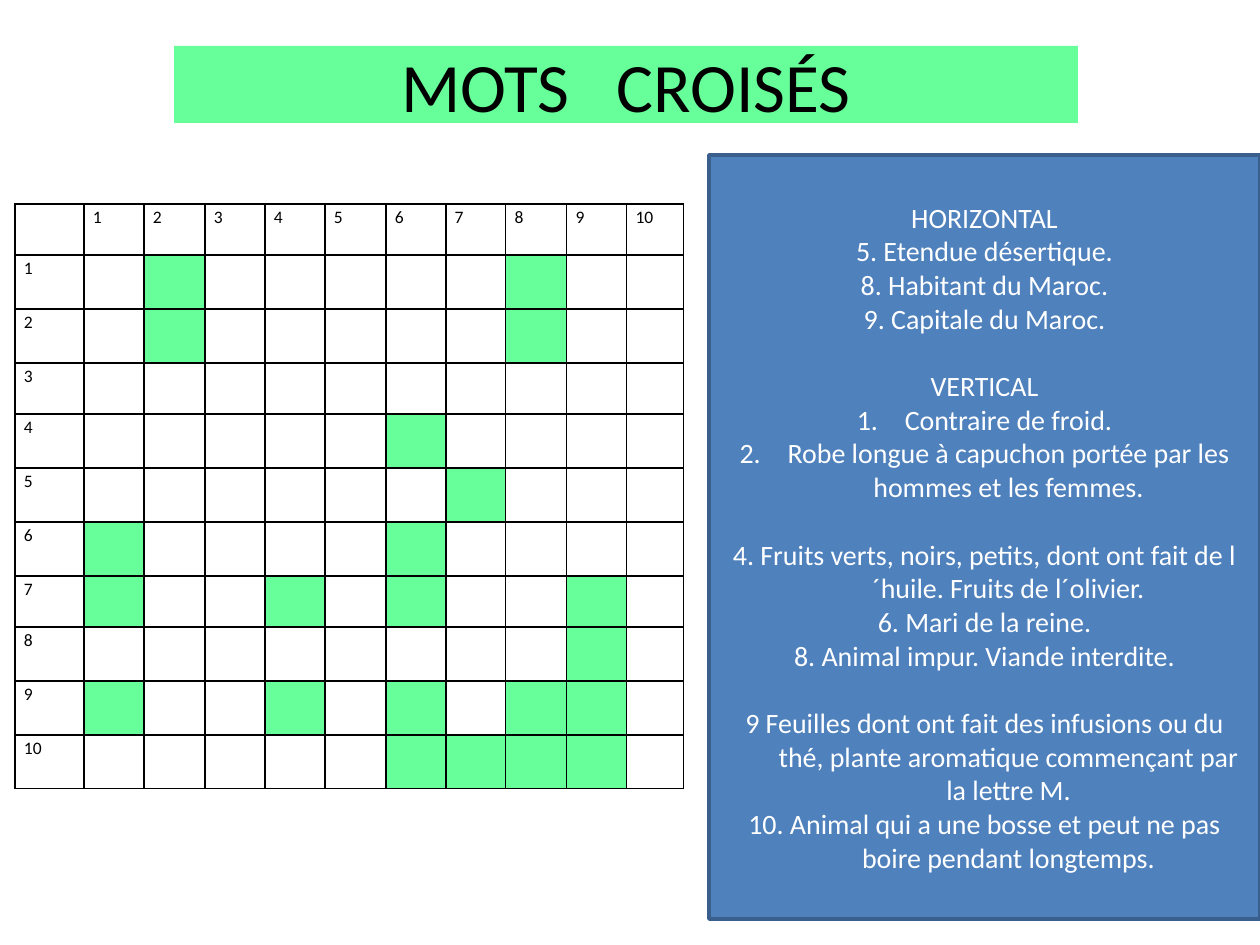
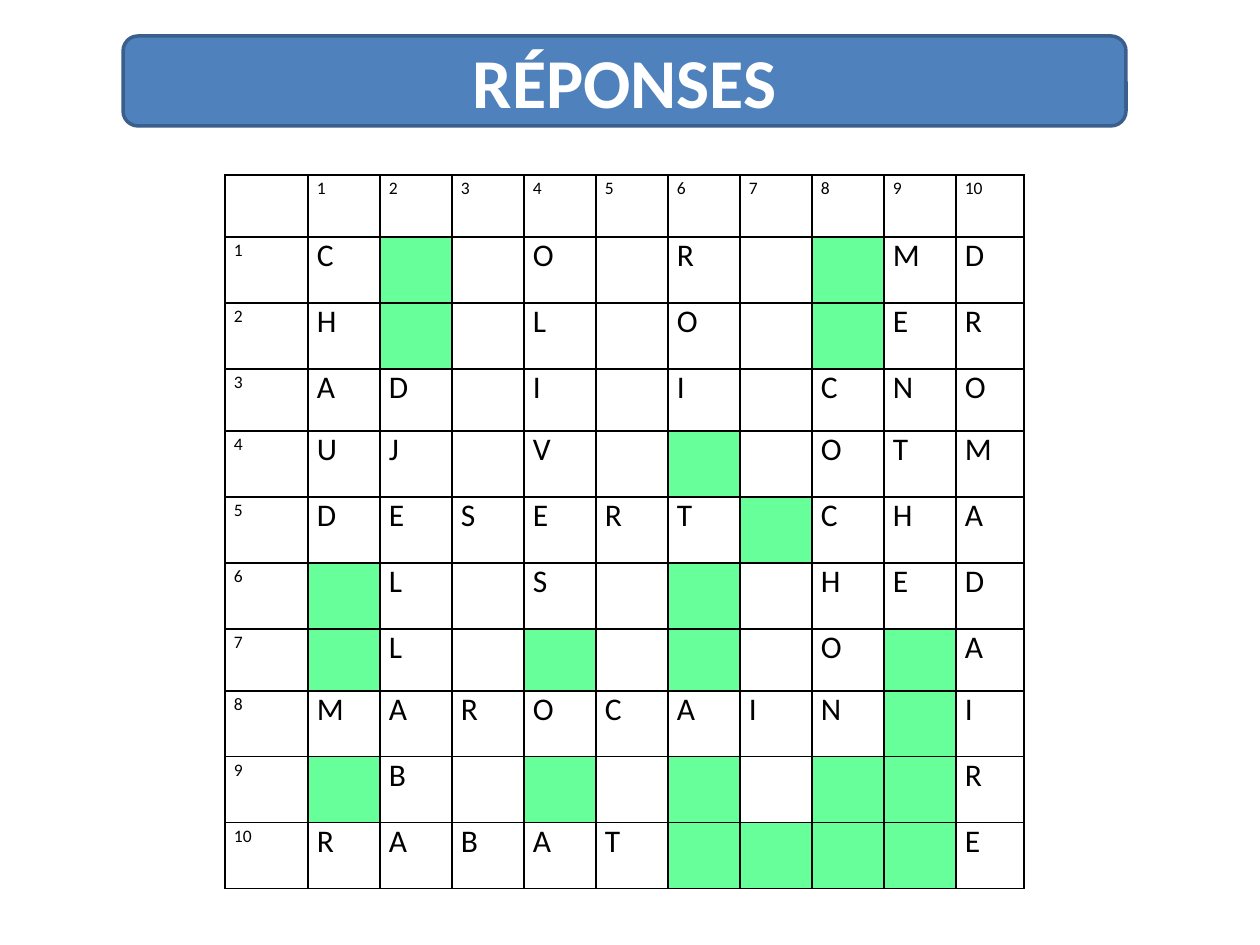
"""Build a crossword slide with its clues and a slide with the answers."""
import lxml.etree
import pptx
import pptx.dml.color
import pptx.enum.shapes
import pptx.enum.text
import pptx.oxml.ns
import pptx.util

PX = 914400 / 126
GREEN = pptx.dml.color.RGBColor(0x66, 0xFF, 0x99)
BLUE = pptx.dml.color.RGBColor(0x4F, 0x81, 0xBD)
DARK_BLUE = pptx.dml.color.RGBColor(0x3A, 0x5F, 0x8C)
WHITE = pptx.dml.color.RGBColor(0xFF, 0xFF, 0xFF)
BLACK = pptx.dml.color.RGBColor(0, 0, 0)
FONT = "Calibri"
HANGING = round(48 * PX)
CLUE_LINE = pptx.util.Pt(19.5)
qn = pptx.oxml.ns.qn
SHAPES = pptx.enum.shapes.MSO_SHAPE

# "#" marks a blocked square and "." an empty one
ANSWERS = [
    "C#.O.R.#MD",
    "H#.L.O.#ER",
    "AD.I.I.CNO",
    "UJ.V.#.OTM",
    "DESERT#CHA",
    "#L.S.#.HED",
    "#L.#.#.O#A",
    "MAROCAIN#I",
    "#B.#.#.##R",
    "RABAT####E",
]
CLUES = [
    ("HORIZONTAL", "plain"),
    ("5. Etendue désertique.", "plain"),
    ("8. Habitant du Maroc.", "plain"),
    ("9. Capitale du Maroc.", "plain"),
    ("VERTICAL", "plain gap"),
    ("Contraire de froid.", "hanging number"),
    ("Robe longue à capuchon portée par les hommes et les femmes.", "hanging number"),
    ("4. Fruits verts, noirs, petits, dont ont fait de l´huile. Fruits de l´olivier.",
     "hanging gap"),
    ("6. Mari de la reine.", "hanging"),
    ("8. Animal impur. Viande interdite.", "hanging"),
    ("9 Feuilles dont ont fait des infusions ou du thé, plante aromatique "
     "commençant par la lettre M.", "hanging gap"),
    ("10. Animal qui a une bosse et peut ne pas boire pendant longtemps.", "hanging"),
]


def add_panel(slide, preset, box, fill, line=None):
    panel = slide.shapes.add_shape(preset, *[round(length * PX) for length in box])
    panel.shadow.inherit = False
    panel.fill.solid()
    panel.fill.fore_color.rgb = fill
    if line is None:
        panel.line.fill.background()
    else:
        panel.line.color.rgb = line
        panel.line.width = pptx.util.Pt(2)
    panel.text_frame.word_wrap = True
    panel.text_frame.vertical_anchor = pptx.enum.text.MSO_ANCHOR.MIDDLE
    return panel.text_frame


def add_grid(slide, left, top, widths, heights, show_letters):
    frame = slide.shapes.add_table(
        len(heights), len(widths), round(left * PX), round(top * PX),
        round(sum(widths) * PX), round(sum(heights) * PX))
    grid = frame.table
    grid.first_row = grid.horz_banding = False
    for column, width in zip(grid.columns, widths):
        column.width = round(width * PX)
    for row, height in zip(grid.rows, heights):
        row.height = round(height * PX)
    for r in range(len(heights)):
        for c in range(len(widths)):
            cell = grid.cell(r, c)
            cell.margin_left = cell.margin_right = round(9 * PX)
            cell.margin_top = cell.margin_bottom = 0
            properties = cell._tc.get_or_add_tcPr()
            for side in ("lnL", "lnR", "lnT", "lnB"):
                border = lxml.etree.SubElement(properties, qn("a:" + side), w="12700")
                ink = lxml.etree.SubElement(border, qn("a:solidFill"))
                lxml.etree.SubElement(ink, qn("a:srgbClr"), val=str(BLACK))
            paragraph = cell.text_frame.paragraphs[0]
            if r and c:
                square = ANSWERS[r - 1][c - 1]
                cell.fill.solid()
                cell.fill.fore_color.rgb = GREEN if square == "#" else WHITE
                if show_letters and square.isalpha():
                    paragraph.text = square
                paragraph.font.size = pptx.util.Pt(18)
            else:
                cell.fill.background()
                if r or c:
                    paragraph.text = str(r or c)
                paragraph.line_spacing = 1.15
                paragraph.font.size = pptx.util.Pt(10)
            paragraph.font.name = FONT
            paragraph.font.color.rgb = BLACK


deck = pptx.Presentation()
deck.slide_width = round(1260 * PX)
deck.slide_height = round(945 * PX)
puzzle, solution = [deck.slides.add_slide(deck.slide_layouts[6]) for _ in range(2)]

heading = add_panel(puzzle, SHAPES.RECTANGLE, (174, 46, 904, 77), GREEN).paragraphs[0]
for word in ("MOTS", " ", "CROISÉS"):
    run = heading.add_run()
    run.text = word
    if word == " ":
        run._r.get_or_add_rPr().set("spc", "1790")
heading.alignment = pptx.enum.text.PP_ALIGN.CENTER
heading.font.name = FONT
heading.font.size = pptx.util.Pt(39.6)
heading.font.color.rgb = BLACK

clue_text = add_panel(puzzle, SHAPES.RECTANGLE, (709, 155, 551, 764), BLUE, DARK_BLUE)
for index, (clue, style) in enumerate(CLUES):
    paragraph = clue_text.add_paragraph() if index else clue_text.paragraphs[0]
    paragraph.text = clue
    paragraph.alignment = pptx.enum.text.PP_ALIGN.CENTER
    properties = paragraph._p.get_or_add_pPr()
    if "hanging" in style:
        properties.set("marL", str(HANGING))
        properties.set("indent", str(-HANGING))
    if "number" in style:
        lxml.etree.SubElement(properties, qn("a:buFont"), typeface="+mj-lt")
        lxml.etree.SubElement(properties, qn("a:buAutoNum"), type="arabicPeriod")
    if "gap" in style:
        paragraph.space_before = CLUE_LINE
    paragraph.font.name = FONT
    paragraph.font.size = pptx.util.Pt(16)
    paragraph.font.color.rgb = WHITE

add_grid(puzzle, 15, 204, [69] + [60, 61, 60] * 3 + [57],
         [51, 54, 54] + [51, 54, 54, 54] * 2, show_letters=False)

banner = add_panel(solution, SHAPES.ROUNDED_RECTANGLE, (123, 36, 1003, 90),
                   BLUE, DARK_BLUE).paragraphs[0]
banner.text = "RÉPONSES"
banner.alignment = pptx.enum.text.PP_ALIGN.CENTER
banner.font.name = FONT
banner.font.size = pptx.util.Pt(40)
banner.font.bold = True
banner.font.color.rgb = WHITE

add_grid(solution, 225, 175, [83] + [72] * 9 + [68],
         [62, 66, 66] + [62, 66, 66, 66] * 2, show_letters=True)

deck.save("out.pptx")
